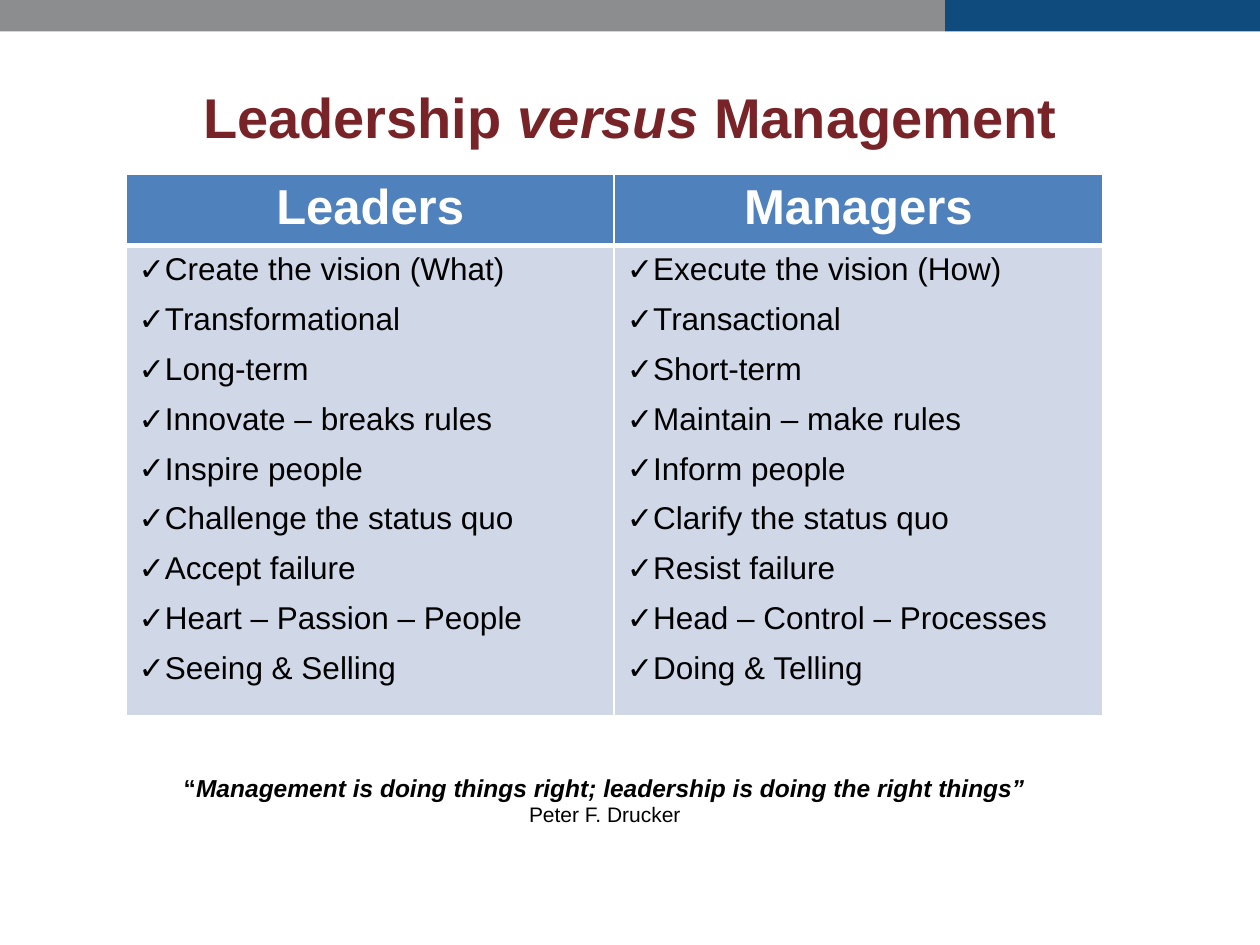
from lxml.etree import SubElement
from pptx import Presentation
from pptx.dml.color import RGBColor
from pptx.enum.shapes import MSO_SHAPE
from pptx.enum.text import MSO_ANCHOR, PP_ALIGN
from pptx.oxml.ns import qn
from pptx.util import Inches, Pt

COLOURS = {
    "band": "8C8D8E",
    "accent": "104B7D",
    "title": "782327",
    "header": "4F81BD",
    "body": "D0D8E8",
    "white": "FFFFFF",
    "black": "000000",
}
FONT = "Arial"
COMPARISON = {
    "Leaders": [
        "Create the vision (What)",
        "Transformational",
        "Long-term",
        "Innovate – breaks rules",
        "Inspire people",
        "Challenge the status quo",
        "Accept failure",
        "Heart – Passion – People",
        "Seeing & Selling",
    ],
    "Managers": [
        "Execute the vision (How)",
        "Transactional",
        "Short-term",
        "Maintain – make rules",
        "Inform people",
        "Clarify the status quo",
        "Resist failure",
        "Head – Control – Processes",
        "Doing & Telling",
    ],
}


class SlideBuilder:
    """Holds the style and the current slide, and places elements by shares of the slide size."""

    def __init__(self, deck):
        self.deck = deck
        self.slide = deck.slides.add_slide(deck.slide_layouts[6])

    def place(self, left, top, width, height):
        across, down = self.deck.slide_width, self.deck.slide_height
        return int(left * across), int(top * down), int(width * across), int(height * down)

    def colour(self, name):
        return RGBColor.from_string(COLOURS[name])

    def bar(self, area, colour):
        shape = self.slide.shapes.add_shape(MSO_SHAPE.RECTANGLE, *self.place(*area))
        shape.shadow.inherit = False
        shape.fill.solid()
        shape.fill.fore_color.rgb = self.colour(colour)
        shape.line.fill.background()

    def style(self, para, size, colour, bold=False, align=PP_ALIGN.CENTER):
        para.alignment = align
        para.font.name = FONT
        para.font.size = Pt(size)
        para.font.bold = bold
        para.font.color.rgb = self.colour(colour)

    def text(self, area, lines, colour, anchor=MSO_ANCHOR.TOP, wrap=True):
        frame = self.slide.shapes.add_textbox(*self.place(*area)).text_frame
        frame.word_wrap = wrap
        frame.vertical_anchor = anchor
        for index, (size, bold, spans) in enumerate(lines):
            para = frame.add_paragraph() if index else frame.paragraphs[0]
            self.style(para, size, colour, bold)
            for words, italic in spans:
                span = para.add_run()
                span.text = words
                span.font.italic = italic

    def border(self, cell, **widths):
        properties = cell._tc.get_or_add_tcPr()
        for side in "LRTB":
            line = SubElement(properties, qn(f"a:ln{side}"), w=str(Pt(widths.get(side, 1))))
            fill = SubElement(line, qn("a:solidFill"))
            SubElement(fill, qn("a:srgbClr"), val=COLOURS["white"])

    def fill_cell(self, cell, colour):
        cell.fill.solid()
        cell.fill.fore_color.rgb = self.colour(colour)

    def checklist(self, cell, items):
        for index, item in enumerate(items):
            para = cell.text_frame.add_paragraph() if index else cell.text_frame.paragraphs[0]
            properties = para._p.get_or_add_pPr()
            properties.set("marL", "0")
            properties.set("indent", "0")
            SubElement(properties, qn("a:buFont"), typeface=FONT)
            SubElement(properties, qn("a:buChar"), char="✓")
            if index:
                para.space_before = Pt(8.4)
            self.style(para, 18, "black", align=PP_ALIGN.LEFT)
            para.add_run().text = item

    def table(self, area, header_share, columns):
        frame = self.slide.shapes.add_table(2, len(columns), *self.place(*area))
        table = frame.table
        table.rows[0].height = int(frame.height * header_share)
        table.rows[1].height = frame.height - table.rows[0].height
        for index, (heading, items) in enumerate(columns.items()):
            header, body = table.cell(0, index), table.cell(1, index)
            self.border(header, B=3)
            self.border(body, T=3)
            self.fill_cell(header, "header")
            self.fill_cell(body, "body")
            para = header.text_frame.paragraphs[0]
            self.style(para, 28, "white", bold=True)
            para.add_run().text = heading
            self.checklist(body, items)


def main():
    deck = Presentation()
    deck.slide_width, deck.slide_height = Inches(10), Inches(7.5)
    page = SlideBuilder(deck)
    page.bar((0.75, 0, 0.25, 1 / 30), "accent")
    page.bar((0, 0, 0.75, 1 / 30), "band")
    title = [("Leadership ", False), ("versus", True), (" Management", False)]
    page.text((0.05, 0.04, 0.9, 1 / 6), [(32, True, title)], "title", MSO_ANCHOR.MIDDLE)
    page.table((0.1, 0.184, 0.775, 0.555), 0.125, COMPARISON)
    quote = [
        ("“", False),
        ("Management is doing things right; leadership is doing the right things”", True),
    ]
    lines = [(14, True, quote), (12, False, [("Peter F. Drucker", False)])]
    page.text((0.134, 0.811, 0.692, 0.072), lines, "black", wrap=False)
    deck.save("out.pptx")


if __name__ == "__main__":
    main()
